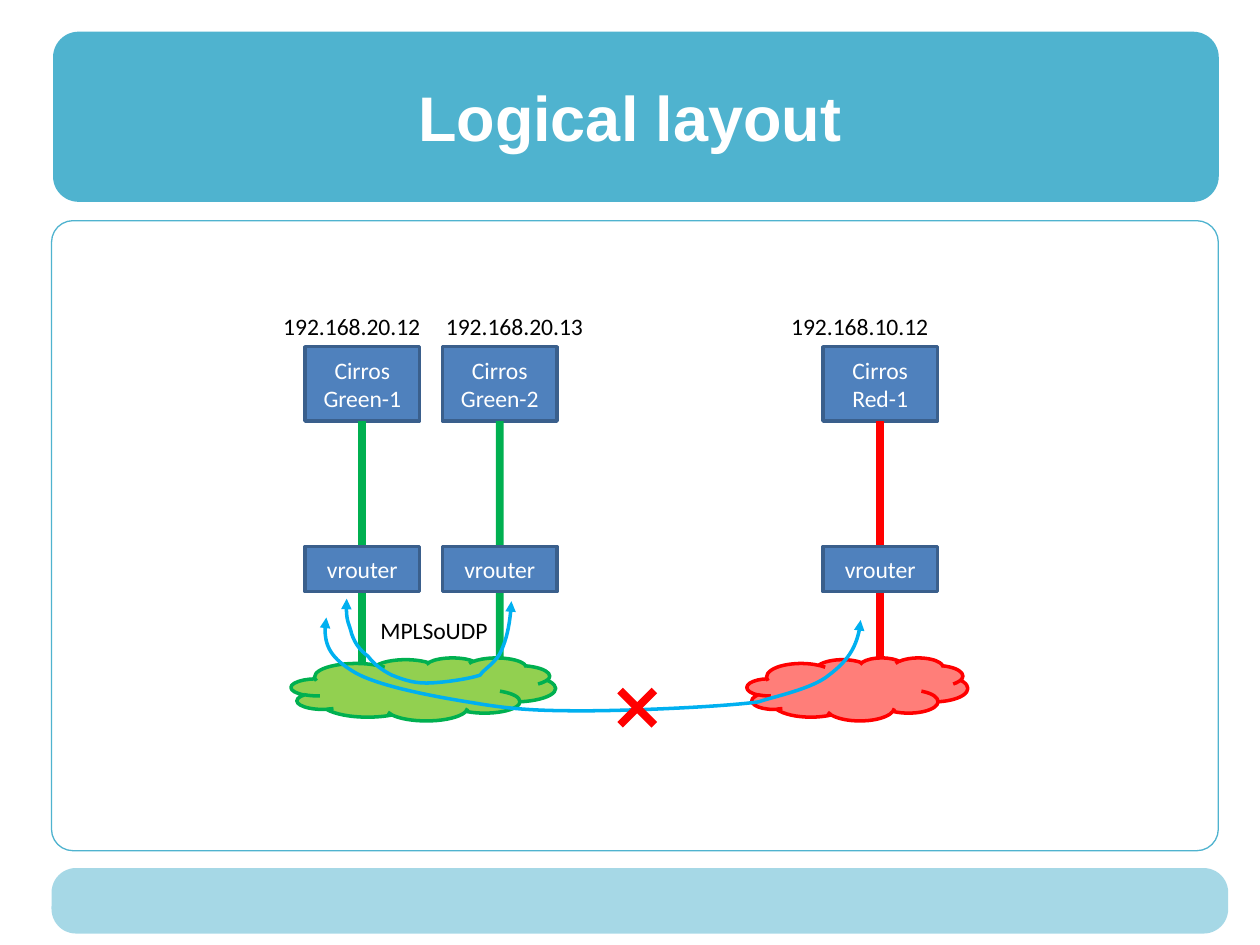
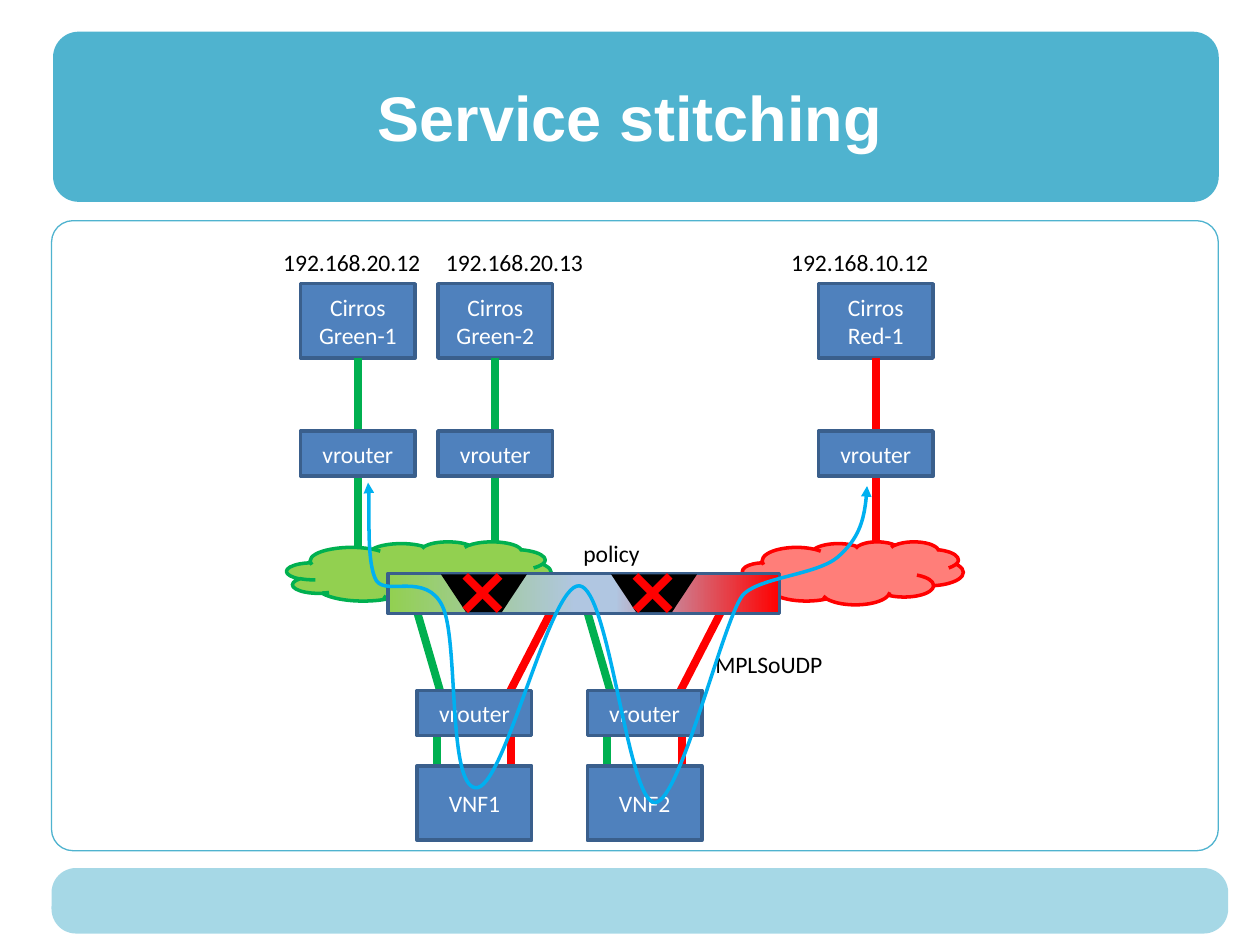
from dataclasses import dataclass

from lxml import etree
from pptx import Presentation
from pptx.dml.color import RGBColor
from pptx.enum import shapes, text
from pptx.oxml.ns import qn
from pptx.util import Cm, Pt

TEAL, WHITE, BLACK = "4FB3CF", "FFFFFF", "000000"
BOX_FILL, BOX_LINE = "4F81BD", "3A5F8C"
GREEN, LIGHT_GREEN = "00B050", "92D050"
RED, LIGHT_RED = "FF0000", "FF7E79"
FLOW_BLUE, PALE_BLUE = "00B0F0", "B0C6E1"
KIND = shapes.MSO_SHAPE
TITLE_ONLY = 5

BOX_WIDTH, HOST_HEIGHT, ROUTER_HEIGHT = 2.31, 1.5, 0.91
CLOUD_HEIGHT, CROSS_SIZE = 1.27, 0.69
WIRE_WEIGHT, OUTLINE_WEIGHT = 4.5, 2


@dataclass(frozen=True)
class Band:
    left: float
    top: float
    width: float
    height: float
    rounding: float
    fill: str | None = None
    line: str | None = None
    opacity: int = 100


@dataclass(frozen=True)
class Host:
    name: str
    address: str
    left: float
    address_left: float
    wire: str


@dataclass(frozen=True)
class Cloud:
    left: float
    width: float
    fill: str
    line: str


@dataclass(frozen=True)
class NetworkRows:
    """Heights of the rows of the network diagram, and its sideways shift."""
    address: float
    host: float
    router: float
    cloud: float
    shift: float = 0


BANDS = [
    Band(1.04, 17.5, 23.72, 1.32, 0.374, fill=TEAL, opacity=50),
    Band(1.07, 0.64, 23.5, 3.43, 0.15, fill=TEAL),
    Band(1.04, 4.45, 23.52, 12.7, 0.034, line=TEAL),
]
HOSTS = [
    Host("Green-1", "192.168.20.12", 6.15, 5.46, GREEN),
    Host("Green-2", "192.168.20.13", 8.92, 8.74, GREEN),
    Host("Red-1", "192.168.10.12", 16.59, 15.7, RED),
]
CLOUDS = [
    Cloud(5.87, 5.33, LIGHT_GREEN, GREEN),
    Cloud(15.06, 4.45, LIGHT_RED, RED),
]

# Each flow is a start point followed by cubic segments of three points.
GREEN_FLOW = [
    (6.99, 12.07),
    (6.96, 12.52), (7.04, 12.57), (7.09, 12.78),
    (7.16, 12.98), (7.26, 13.11), (7.42, 13.23),
    (7.54, 13.39), (7.7, 13.51), (7.9, 13.61),
    (8.1, 13.69), (8.31, 13.77), (8.59, 13.77),
    (8.89, 13.77), (9.45, 13.69), (9.68, 13.61),
    (9.75, 13.49), (10.01, 13.36), (10.11, 13.11),
    (10.21, 12.88), (10.29, 12.55), (10.31, 12.12),
]
BLOCKED_FLOW = [
    (6.58, 12.45),
    (6.48, 12.93), (6.68, 13.28), (7.16, 13.56),
    (7.65, 13.84), (8.79, 14.05), (9.55, 14.17),
    (10.31, 14.3), (10.82, 14.33), (11.76, 14.33),
    (12.73, 14.33), (14.55, 14.25), (15.29, 14.15),
    (15.57, 14.05), (16.38, 13.89), (16.71, 13.61),
    (17.07, 13.34), (17.32, 12.98), (17.35, 12.5),
]
STITCHED_FLOW = [
    (7.42, 9.73),
    (7.47, 9.93), (7.39, 11.38), (7.59, 11.71),
    (7.8, 12.01), (8.59, 11.53), (8.92, 12.22),
    (9.25, 12.9), (9.02, 15.8), (9.58, 15.88),
    (10.16, 15.98), (11.07, 11.76), (11.68, 11.81),
    (12.29, 11.86), (12.65, 16.21), (13.21, 16.18),
    (13.74, 16.13), (14.63, 12.27), (15.01, 11.96),
    (15.39, 11.63), (16.48, 11.58), (16.89, 11.23),
    (17.3, 10.87), (17.45, 10.44), (17.48, 9.8),
]


def rgb(color: str) -> RGBColor:
    return RGBColor.from_string(color)


def write(shape, words: str, *, size=13.5, color=BLACK, font="Calibri",
          bold=False, align=None, anchor=None) -> None:
    frame = shape.text_frame
    frame.text = words
    if anchor is not None:
        frame.vertical_anchor = anchor
    for paragraph in frame.paragraphs:
        paragraph.alignment = align
        paragraph.font.size = Pt(size)
        paragraph.font.name = font
        paragraph.font.bold = bold
        paragraph.font.color.rgb = rgb(color)


def add_shape(slide, kind, left: float, top: float, width: float, height: float,
              fill: str | None = None, line: str | None = None,
              weight: float = OUTLINE_WEIGHT):
    shape = slide.shapes.add_shape(kind, Cm(left), Cm(top), Cm(width), Cm(height))
    shape.shadow.inherit = False
    if fill:
        shape.fill.solid()
        shape.fill.fore_color.rgb = rgb(fill)
    else:
        shape.fill.background()
    if line:
        shape.line.color.rgb = rgb(line)
        shape.line.width = Pt(weight)
    else:
        shape.line.fill.background()
    return shape


def add_box(slide, words: str, left: float, top: float, height: float):
    box = add_shape(slide, KIND.RECTANGLE, left, top, BOX_WIDTH, height,
                    BOX_FILL, BOX_LINE)
    frame = box.text_frame
    frame.margin_left = frame.margin_right = Cm(0.18)
    frame.margin_top = frame.margin_bottom = Cm(0.1)
    write(box, words, color=WHITE, align=text.PP_ALIGN.CENTER,
          anchor=text.MSO_ANCHOR.MIDDLE)
    return box


def add_label(slide, words: str, left: float, top: float, width: float) -> None:
    label = slide.shapes.add_textbox(Cm(left), Cm(top), Cm(width), Cm(0.84))
    label.text_frame.word_wrap = False
    label.text_frame.auto_size = text.MSO_AUTO_SIZE.SHAPE_TO_FIT_TEXT
    write(label, words)


def add_wire(holder, color: str, start: tuple, end: tuple):
    """Draw a thick line on a slide or in a group."""
    wire = holder.shapes.add_connector(
        shapes.MSO_CONNECTOR.STRAIGHT, *(Cm(value) for value in start + end))
    wire.line.color.rgb = rgb(color)
    wire.line.width = Pt(WIRE_WEIGHT)
    etree.SubElement(wire._element.spPr, qn("a:effectLst"))
    return wire


def add_cross(slide, left: float, top: float) -> None:
    group = slide.shapes.add_group_shape()
    right, bottom = left + CROSS_SIZE, top + CROSS_SIZE
    add_wire(group, RED, (right, top), (left, bottom))
    add_wire(group, RED, (right, bottom), (left, top))


def add_flow(slide, points: list) -> None:
    """Draw a smooth curve with an arrowhead at both ends."""
    spots = [(Cm(x), Cm(y)) for x, y in points]
    builder = slide.shapes.build_freeform(*spots[0])
    builder.add_line_segments(spots[1:], close=False)
    flow = builder.convert_to_shape()
    flow.shadow.inherit = False
    flow.fill.background()
    flow.line.color.rgb = rgb(FLOW_BLUE)
    flow.line.width = Pt(OUTLINE_WEIGHT)

    outline = next(flow._element.iter(qn("a:path")))
    segments = outline.findall(qn("a:lnTo"))
    for first in range(0, len(segments), 3):
        curve = etree.SubElement(outline, qn("a:cubicBezTo"))
        for segment in segments[first:first + 3]:
            curve.append(segment[0])
            outline.remove(segment)

    line = flow._element.spPr.find(qn("a:ln"))
    for end in ("a:headEnd", "a:tailEnd"):
        etree.SubElement(line, qn(end), type="triangle")


def fill_gradient(shape, stops: list) -> None:
    """Fill from left to right with (percent, colour) stops."""
    shape.fill.gradient()
    shape.fill.gradient_angle = 0
    stop_list = next(shape._element.iter(qn("a:gsLst")))
    for old_stop in list(stop_list):
        stop_list.remove(old_stop)
    for percent, color in stops:
        stop = etree.SubElement(stop_list, qn("a:gs"), pos=str(percent * 1000))
        etree.SubElement(stop, qn("a:srgbClr"), val=color)


def move_bands_to_layout(slide) -> None:
    """Draw the shared bands and put them at the back of the slide's layout."""
    layout_tree = slide.slide_layout.shapes._spTree
    for position, band in enumerate(BANDS, start=2):
        shape = add_shape(slide, KIND.ROUNDED_RECTANGLE, band.left, band.top,
                          band.width, band.height, band.fill, band.line, 0.75)
        shape.adjustments[0] = band.rounding
        if band.opacity < 100:
            color = next(shape._element.spPr.iter(qn("a:srgbClr")))
            etree.SubElement(color, qn("a:alpha"), val=str(band.opacity * 1000))
        layout_tree.insert(position, shape._element)


def add_titled_slide(presentation, words: str):
    slide = presentation.slides.add_slide(presentation.slide_layouts[TITLE_ONLY])
    title = slide.shapes.title
    title.left, title.top = Cm(1.27), Cm(0.76)
    title.width, title.height = Cm(22.86), Cm(3.18)
    write(title, words, size=36, color=WHITE, font="Arial", bold=True,
          align=text.PP_ALIGN.CENTER, anchor=text.MSO_ANCHOR.MIDDLE)
    return slide


def draw_networks(slide, rows: NetworkRows) -> None:
    """Draw the hosts with their addresses, wires, routers and clouds."""
    for host in HOSTS:
        left = host.left + rows.shift
        center = left + BOX_WIDTH / 2
        add_label(slide, host.address, host.address_left, rows.address, 3.33)
        box = add_box(slide, f"Cirros\n{host.name}", left, rows.host, HOST_HEIGHT)
        wire = add_wire(slide, host.wire, (center, rows.host + HOST_HEIGHT),
                        (center, rows.cloud + CLOUD_HEIGHT / 2))
        wire.begin_connect(box, 2)
        add_box(slide, "vrouter", left, rows.router, ROUTER_HEIGHT)
    for cloud in CLOUDS:
        add_shape(slide, KIND.CLOUD, cloud.left + rows.shift, rows.cloud,
                  cloud.width, CLOUD_HEIGHT, cloud.fill, cloud.line)


def draw_logical_layout(slide) -> None:
    draw_networks(slide, NetworkRows(address=6.17, host=6.99, router=11.02, cloud=13.26))
    add_flow(slide, GREEN_FLOW)
    add_label(slide, "MPLSoUDP", 7.42, 12.29, 2.69)
    add_flow(slide, BLOCKED_FLOW)
    add_cross(slide, 12.5, 13.92)


def draw_service_stitching(slide) -> None:
    router_top, vnf_top = 13.92, 15.44
    vnf_lefts = [8.41 + 3.43 * column for column in range(2)]

    draw_networks(slide, NetworkRows(address=4.88, host=5.72, router=8.69,
                                     cloud=10.92, shift=-0.09))
    add_label(slide, "MPLSoUDP", 14.17, 12.98, 2.69)
    for left in vnf_lefts:
        add_wire(slide, GREEN, (left, 12.34), (left + 0.46, router_top))
        add_wire(slide, RED, (left + 2.77, 12.19), (left + 1.88, router_top))
    policy = add_shape(slide, KIND.RECTANGLE, 7.82, 11.56, 7.9, 0.81, line=BOX_LINE)
    fill_gradient(policy, [(0, LIGHT_GREEN), (48, PALE_BLUE), (58, PALE_BLUE), (100, RED)])

    for number, left in enumerate(vnf_lefts, start=1):
        for color, offset in ((GREEN, 0.4), (RED, 1.9)):
            add_wire(slide, color, (left + offset, 14.63), (left + offset, 15.67))
        add_box(slide, "vrouter", left, router_top, ROUTER_HEIGHT)
        add_box(slide, f"VNF{number}", left, vnf_top, HOST_HEIGHT)
        barrier = add_shape(slide, KIND.TRAPEZOID, left + 0.48, 11.58, 1.73, 0.76, BLACK)
        barrier.adjustments[0] = 0.662
        barrier.rotation = 180

    add_flow(slide, STITCHED_FLOW)
    for left in vnf_lefts:
        add_cross(slide, left + 0.97, 11.61)
    add_label(slide, "policy", 11.51, 10.74, 1.68)


def main() -> None:
    presentation = Presentation()
    presentation.slide_width, presentation.slide_height = Cm(25.4), Cm(19.05)
    logical = add_titled_slide(presentation, "Logical layout")
    move_bands_to_layout(logical)
    draw_logical_layout(logical)
    draw_service_stitching(add_titled_slide(presentation, "Service stitching"))
    presentation.save("out.pptx")


if __name__ == "__main__":
    main()
